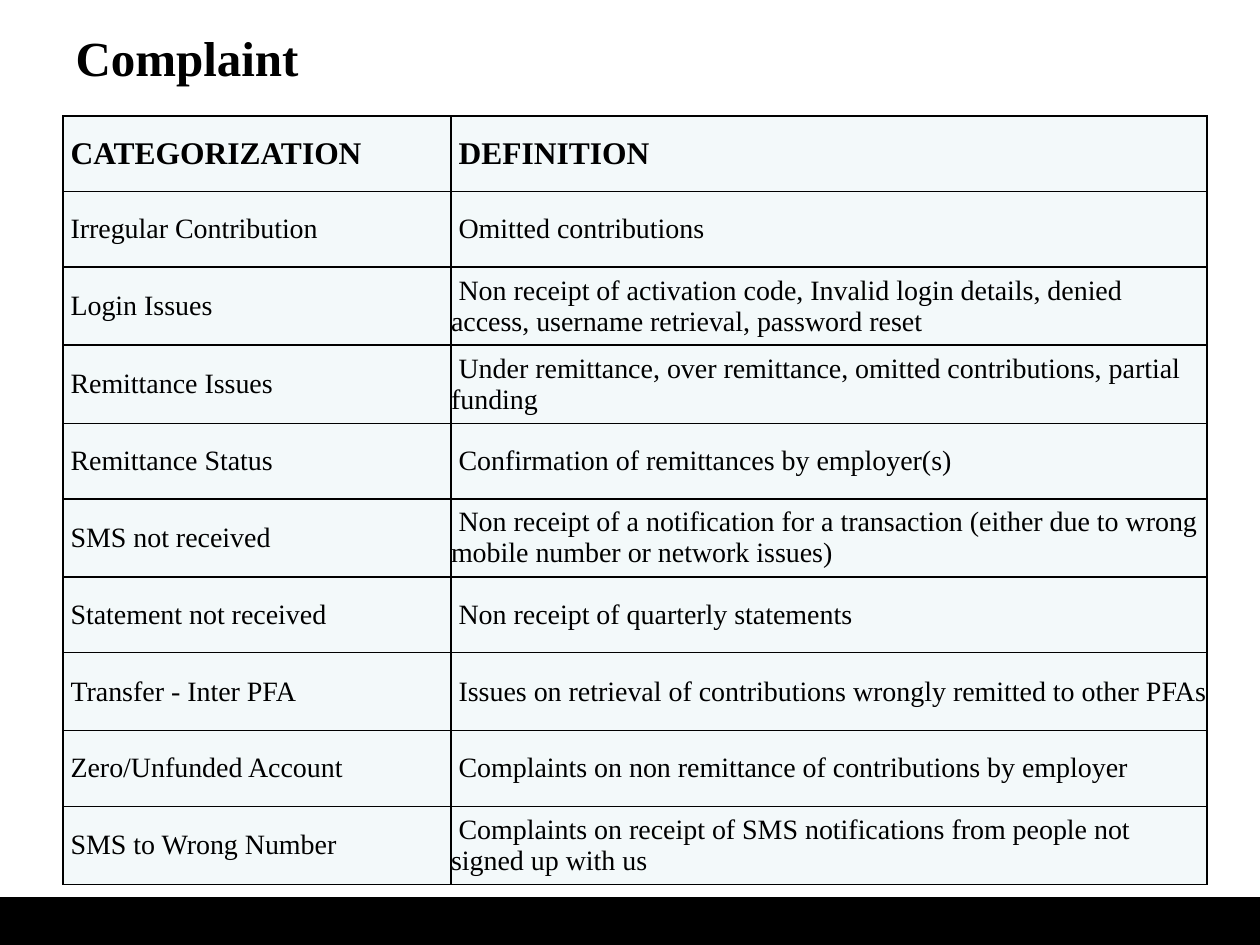
import dataclasses

import lxml.etree
import pptx
import pptx.dml.color
import pptx.enum.shapes
import pptx.enum.text
import pptx.oxml.ns
import pptx.util

Inches = pptx.util.Inches
Pt = pptx.util.Pt
qn = pptx.oxml.ns.qn

COLORS = {"ink": "000000", "cell": "F3F9FA"}
FONT = "Times New Roman"
WRAP = 60


@dataclasses.dataclass(frozen=True)
class Entry:
    label: str
    meaning: str
    size: int = 16
    bold: bool = False

    def height(self) -> float:
        return 0.62 if len(self.meaning) > WRAP else 0.6


ENTRIES = [
    Entry("CATEGORIZATION", "DEFINITION", 18, True),
    Entry("Irregular Contribution", "Omitted contributions"),
    Entry("Login Issues", "Non receipt of activation code, Invalid login details, "
          "denied access, username retrieval, password reset"),
    Entry("Remittance Issues", "Under remittance, over remittance, "
          "omitted contributions, partial funding"),
    Entry("Remittance Status", "Confirmation of remittances by employer(s)"),
    Entry("SMS not received", "Non receipt of a notification for a transaction "
          "(either due to wrong mobile number or network issues)"),
    Entry("Statement not received", "Non receipt of quarterly statements"),
    Entry("Transfer - Inter PFA", "Issues on retrieval of contributions "
          "wrongly remitted to other PFAs"),
    Entry("Zero/Unfunded Account",
          "Complaints on non remittance of contributions by employer"),
    Entry("SMS to Wrong Number", "Complaints on receipt of SMS notifications "
          "from people not signed up with us"),
]


def color(name: str) -> pptx.dml.color.RGBColor:
    return pptx.dml.color.RGBColor.from_string(COLORS[name])


def style(para, size: int, bold: bool) -> None:
    para.alignment = pptx.enum.text.PP_ALIGN.LEFT
    para.font.name = FONT
    para.font.size = Pt(size)
    para.font.bold = bold
    para.font.color.rgb = color("ink")


def border(cell) -> None:
    props = cell._tc.get_or_add_tcPr()
    for place, side in enumerate(("lnL", "lnR", "lnT", "lnB")):
        line = lxml.etree.Element(qn(f"a:{side}"), w=str(Pt(1)))
        fill = lxml.etree.SubElement(line, qn("a:solidFill"))
        lxml.etree.SubElement(fill, qn("a:srgbClr"), val=COLORS["ink"])
        props.insert(place, line)


def write_cell(cell, text: str, entry: Entry) -> None:
    cell.margin_left = cell.margin_right = 0
    cell.margin_top = cell.margin_bottom = 0
    cell.vertical_anchor = pptx.enum.text.MSO_ANCHOR.MIDDLE
    cell.fill.solid()
    cell.fill.fore_color.rgb = color("cell")
    border(cell)
    cell.text = text
    para = cell.text_frame.paragraphs[0]
    para._p.get_or_add_pPr().set("indent", str(Inches(0.06)))
    style(para, entry.size, entry.bold)


def add_bar(slide) -> None:
    bar = slide.shapes.add_shape(
        pptx.enum.shapes.MSO_SHAPE.RECTANGLE,
        Inches(0), Inches(7.12), Inches(10), Inches(0.38))
    bar.shadow.inherit = False
    bar.fill.solid()
    bar.fill.fore_color.rgb = color("ink")
    bar.line.fill.background()


def set_title(slide, text: str) -> None:
    title = slide.shapes.title
    title.left, title.top = Inches(0.5), Inches(0.08)
    title.width, title.height = Inches(9), Inches(0.75)
    title.text = text
    title.text_frame.vertical_anchor = pptx.enum.text.MSO_ANCHOR.MIDDLE
    style(title.text_frame.paragraphs[0], 28, True)


def add_grid(slide, entries: list[Entry]) -> None:
    total = sum(entry.height() for entry in entries)
    table = slide.shapes.add_table(
        len(entries), 2, Inches(0.5), Inches(0.92),
        Inches(9.08), Inches(total)).table
    table.first_row = table.horz_banding = False
    table.columns[0].width = Inches(3.08)
    table.columns[1].width = Inches(6)
    for row, entry in zip(table.rows, entries):
        row.height = Inches(entry.height())
        for cell, text in zip(row.cells, (entry.label, entry.meaning)):
            write_cell(cell, text, entry)


def main() -> None:
    deck = pptx.Presentation()
    deck.slide_width, deck.slide_height = Inches(10), Inches(7.5)
    slide = deck.slides.add_slide(deck.slide_layouts[5])
    add_bar(slide)
    set_title(slide, "Complaint")
    add_grid(slide, ENTRIES)
    deck.save("out.pptx")


if __name__ == "__main__":
    main()
